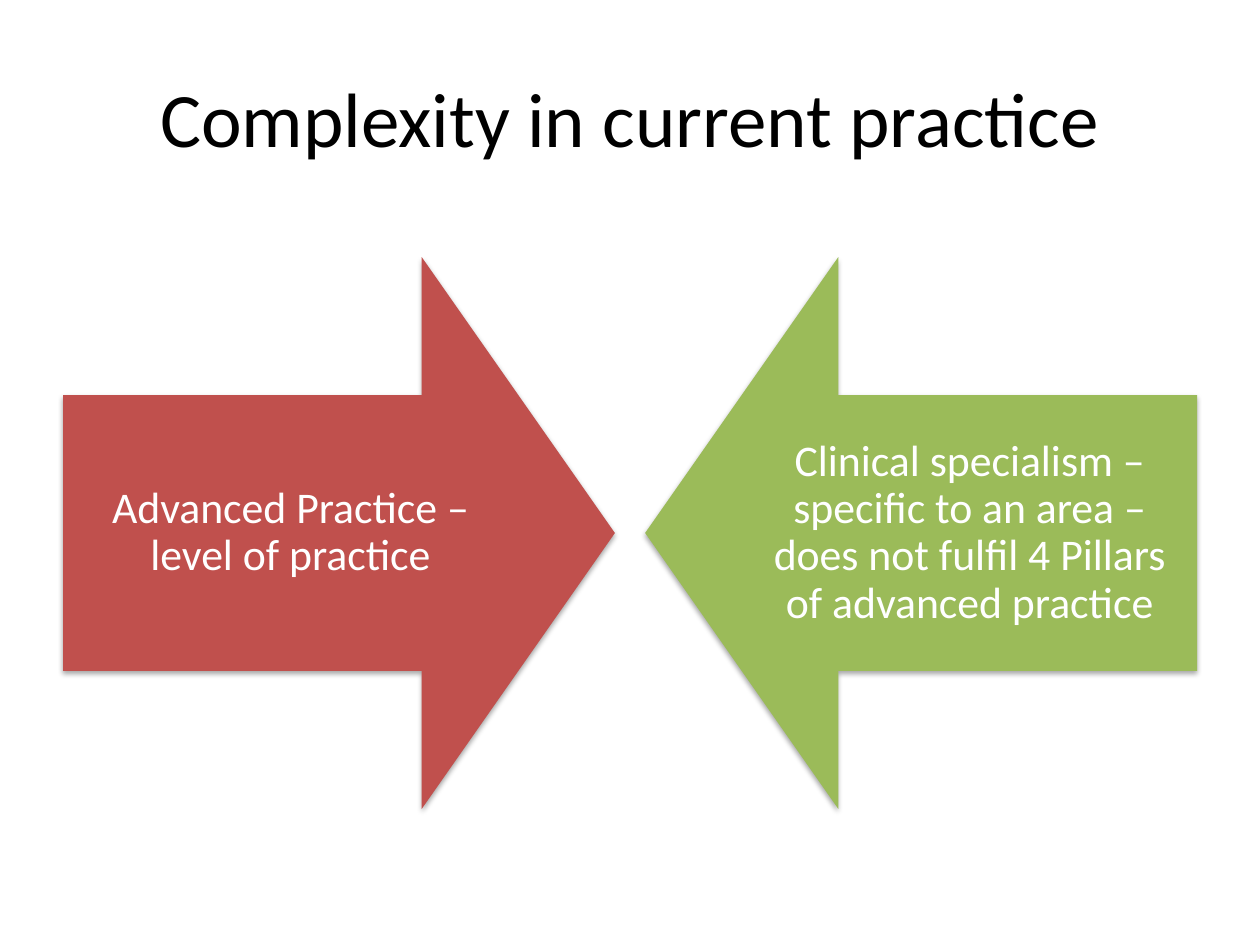
import pptx
import pptx.util
import pptx.dml.color
import pptx.enum.shapes
import pptx.enum.text
import pptx.oxml
from dataclasses import dataclass
from pptx.util import Inches


@dataclass(frozen=True)
class Theme:
    font: str = "Calibri"
    title_size: int = 44
    label_size: int = 25
    black: str = "000000"
    white: str = "FFFFFF"
    red: str = "C0504D"
    green: str = "9BBB59"


theme = Theme()

SHADOW = (
    '<a:effectLst xmlns:a="http://schemas.openxmlformats.org/drawingml/2006/main">'
    '<a:outerShdw blurRad="40000" dist="23000" dir="5400000" rotWithShape="0">'
    f'<a:srgbClr val="{theme.black}"><a:alpha val="35000"/></a:srgbClr>'
    "</a:outerShdw></a:effectLst>"
)


def add_text(s, text, box, size, color):
    """Add a centred, wrapping text box and return its text frame."""
    tf = s.shapes.add_textbox(*(Inches(v) for v in box)).text_frame
    tf.word_wrap = True
    tf.vertical_anchor = pptx.enum.text.MSO_ANCHOR.MIDDLE
    tf.text = text
    p = tf.paragraphs[0]
    p.alignment = pptx.enum.text.PP_ALIGN.CENTER
    font = p.runs[0].font
    font.name = theme.font
    font.size = pptx.util.Pt(size)
    font.color.rgb = pptx.dml.color.RGBColor.from_string(color)
    return tf


prs = pptx.Presentation()
prs.slide_width, prs.slide_height = Inches(10), Inches(7.5)
s = prs.slides.add_slide(prs.slide_layouts[6])

add_text(s, "Complexity in current practice", (0.5, 0.3, 9, 1.25),
         theme.title_size, theme.black)

margin, arrow_top, arrow_size = 0.5, 2.04, 4.38
label_width, label_height = 3.61, arrow_size / 2
label_top = arrow_top + arrow_size / 4
right_edge = 10 - margin

# Each arrow points to the middle; its label sits at the outer end.
arrows = [
    ("Advanced Practice – level of practice",
     theme.red, 270, margin, margin),
    ("Clinical specialism – specific to an area – does not fulfil 4 Pillars "
     "of advanced practice",
     theme.green, 90, right_edge - arrow_size, right_edge - label_width),
]

for text, color, rotation, arrow_left, label_left in arrows:
    sp = s.shapes.add_shape(
        pptx.enum.shapes.MSO_SHAPE.DOWN_ARROW, Inches(arrow_left),
        Inches(arrow_top), Inches(arrow_size), Inches(arrow_size))
    sp.rotation = rotation
    sp.adjustments[0], sp.adjustments[1] = 0.5, 0.35
    sp.fill.solid()
    sp.fill.fore_color.rgb = pptx.dml.color.RGBColor.from_string(color)
    sp.line.fill.background()
    sp._element.spPr.append(pptx.oxml.parse_xml(SHADOW))

    tf = add_text(s, text, (label_left, label_top, label_width, label_height),
                  theme.label_size, theme.white)
    tf.margin_left = tf.margin_right = Inches(0.19)
    tf.margin_top = tf.margin_bottom = Inches(0.19)
    tf.paragraphs[0].line_spacing = 0.9

prs.save("out.pptx")
